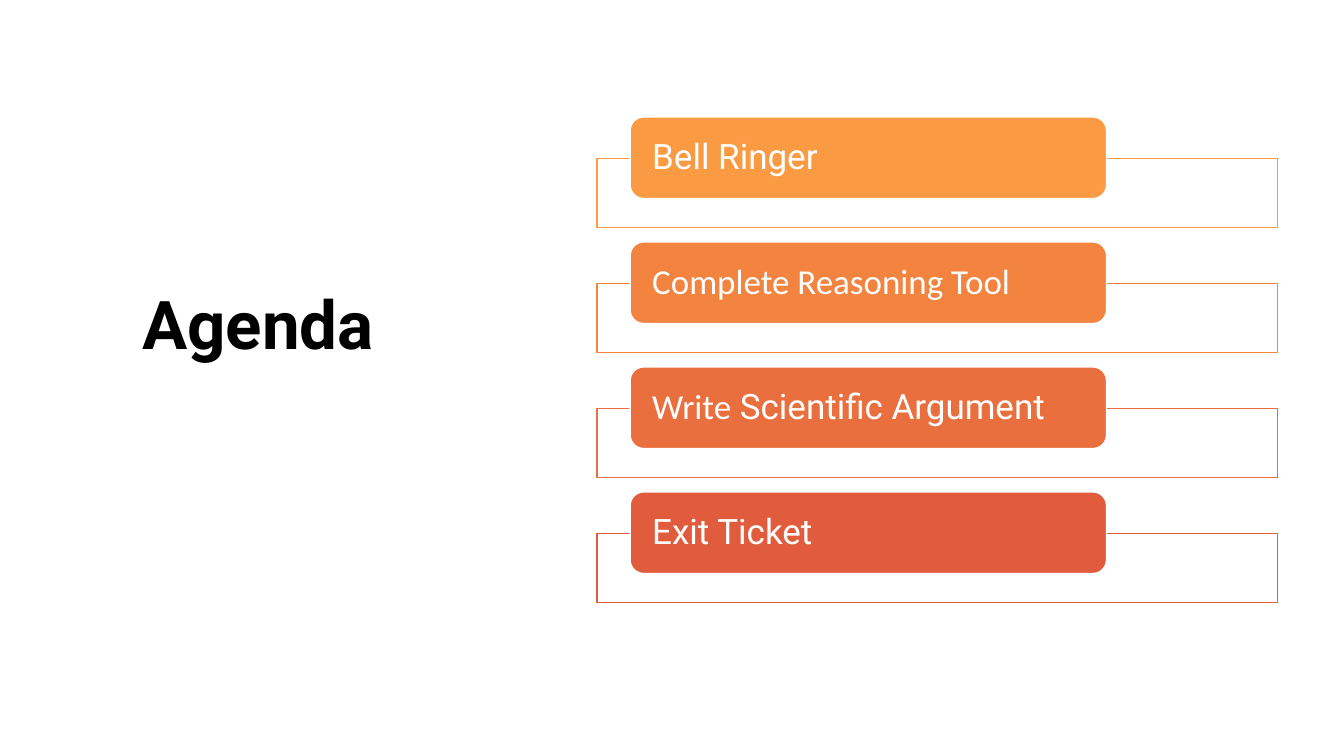
from pptx import Presentation
from pptx.dml.color import RGBColor
from pptx.enum import shapes, text
from pptx.oxml import ns
from pptx.util import Inches, Pt
from lxml import etree

COLORS = {"ink": "000000", "paper": "FFFFFF"}
ITEMS = [
    ("FA9A42", [("Bell Ringer", "Roboto")]),
    ("F28440", [("Complete Reasoning Tool", "Calibri")]),
    ("EA6F3E", [("Write", "Calibri"), (" Scientific Argument", "Roboto")]),
    ("E15C3D", [("Exit Ticket", "Roboto")]),
]
STEP = 1.24


def add_box(slide, kind, box, fill, line):
    shape = slide.shapes.add_shape(kind, *map(Inches, box))
    shape.shadow.inherit = False
    shape.fill.solid()
    shape.fill.fore_color.rgb = RGBColor.from_string(fill)
    shape.line.color.rgb = RGBColor.from_string(line)
    shape.line.width = Pt(1)
    return shape


def add_title(slide, box):
    title = slide.shapes.title
    title.left, title.top, title.width, title.height = map(Inches, box)
    frame = title.text_frame
    frame.text = "Agenda"
    frame.word_wrap = True
    frame.auto_size = text.MSO_AUTO_SIZE.NONE
    frame.vertical_anchor = text.MSO_ANCHOR.TOP
    para = frame.paragraphs[0]
    para.alignment = text.PP_ALIGN.LEFT
    para.line_spacing = 0.9
    para.font.name = "Roboto"
    para.font.size = Pt(48)
    para.font.bold = True
    para.font.color.rgb = RGBColor.from_string(COLORS["ink"])


def add_item(slide, box, color, runs):
    left, top, width, height = box
    panel = add_box(slide, shapes.MSO_SHAPE.RECTANGLE,
                    (left, top + 0.41, width, height - 0.41), COLORS["paper"], color)
    tint = panel.fill._xPr.find(ns.qn("a:solidFill"))[0]
    etree.SubElement(tint, ns.qn("a:alpha"), val="90000")

    label = add_box(slide, shapes.MSO_SHAPE.ROUNDED_RECTANGLE,
                    (left + 0.33, top, width * 0.7, 0.81), color, COLORS["paper"])
    frame = label.text_frame
    frame.word_wrap = True
    frame.vertical_anchor = text.MSO_ANCHOR.MIDDLE
    frame.margin_left = frame.margin_right = Inches(0.18)
    frame.margin_top = frame.margin_bottom = 0
    para = frame.paragraphs[0]
    para.alignment = text.PP_ALIGN.LEFT
    para.line_spacing = 0.9
    para.font.size = Pt(25)
    para.font.color.rgb = RGBColor.from_string(COLORS["paper"])
    for words, font in runs:
        run = para.add_run()
        run.text = words
        run.font.name = font


def add_list(slide, box):
    left, top, width, height = box
    for i, (color, runs) in enumerate(ITEMS):
        add_item(slide, (left, top + i * STEP, width, height - 3 * STEP), color, runs)


def main():
    deck = Presentation()
    deck.slide_width, deck.slide_height = Inches(13.33), Inches(7.5)
    slide = deck.slides.add_slide(deck.slide_layouts[5])
    add_title(slide, (1.31, 2.84, 4.35, 3.9))
    add_list(slide, (5.92, 1.16, 6.75, 4.82))
    deck.save("out.pptx")


if __name__ == "__main__":
    main()
